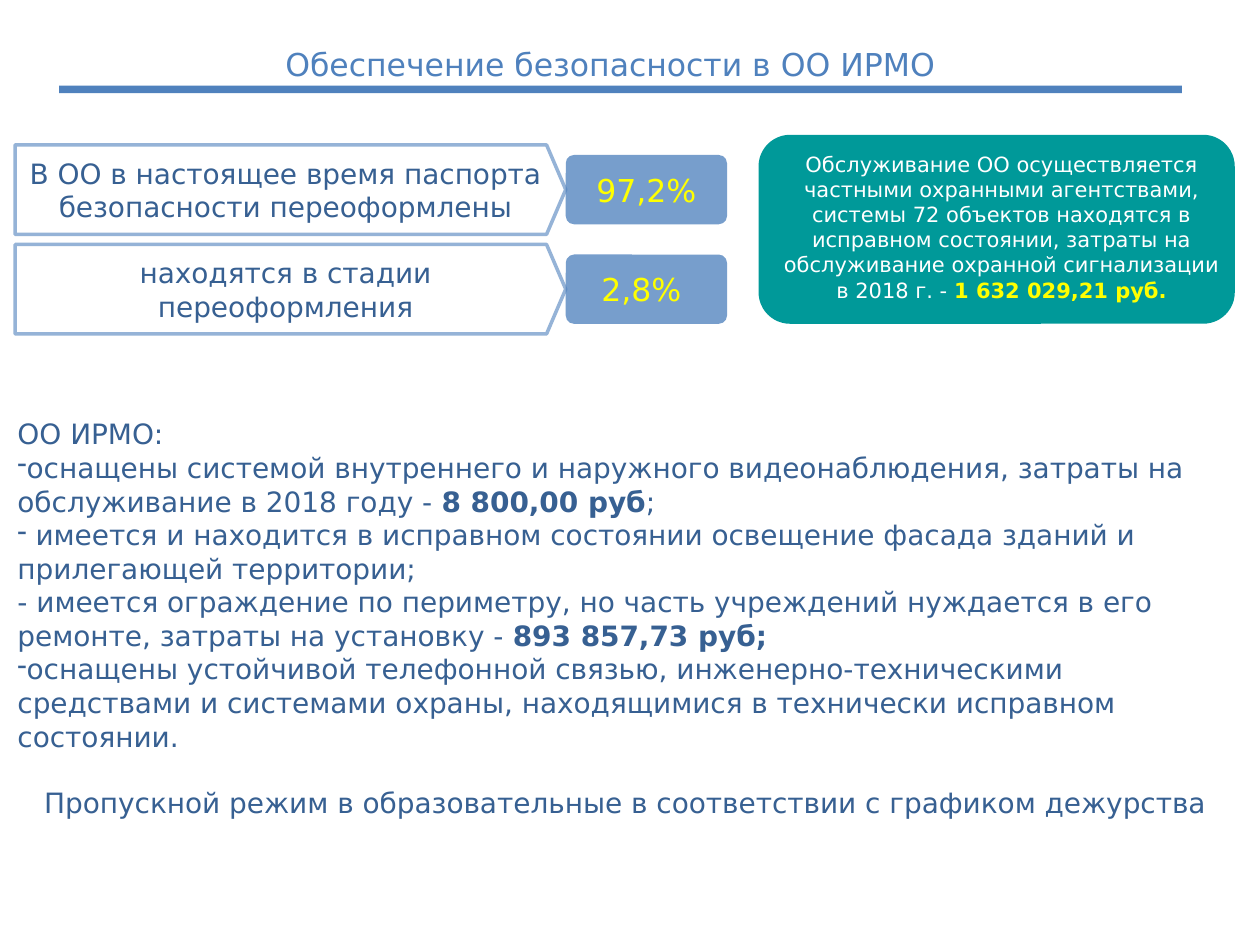
from dataclasses import dataclass

from lxml.etree import SubElement
from pptx import Presentation
from pptx.dml.color import RGBColor
from pptx.enum.shapes import MSO_SHAPE
from pptx.enum.text import MSO_ANCHOR, PP_ALIGN
from pptx.oxml.ns import qn
from pptx.util import Inches, Pt

COLUMNS, ROWS = 100, 75
SLIDE_WIDTH, SLIDE_HEIGHT = Inches(10), Inches(7.5)


@dataclass(frozen=True)
class Theme:
    font: str = "DejaVu Sans"
    accent: str = "4F81BD"
    body: str = "376092"
    outline: str = "95B3D7"
    panel: str = "009999"
    light: str = "FFFFFF"
    highlight: str = "FFFF00"
    title_size: int = 18
    body_size: int = 16
    note_size: int = 12


THEME = Theme()


def rgb(value):
    return RGBColor.from_string(value)


def place(column, row, columns, rows):
    return (
        int(SLIDE_WIDTH * column / COLUMNS),
        int(SLIDE_HEIGHT * row / ROWS),
        int(SLIDE_WIDTH * columns / COLUMNS),
        int(SLIDE_HEIGHT * rows / ROWS),
    )


def add_dash(paragraph):
    properties = paragraph._p.get_or_add_pPr()
    properties.set("marL", "0")
    properties.set("indent", "0")
    SubElement(properties, qn("a:buChar")).set("char", "-")


def write_paragraph(paragraph, parts, size, color, centered=True, dash=False,
                    strong_color=None):
    if dash:
        add_dash(paragraph)
    paragraph.alignment = PP_ALIGN.CENTER if centered else PP_ALIGN.LEFT
    paragraph.font.name = THEME.font
    paragraph.font.size = Pt(size)
    paragraph.font.color.rgb = rgb(color)
    for position, words in enumerate(parts):
        run = paragraph.add_run()
        run.text = words
        if position % 2:
            run.font.bold = True
            if strong_color:
                run.font.color.rgb = rgb(strong_color)


def next_paragraph(frame, position):
    return frame.add_paragraph() if position else frame.paragraphs[0]


def add_text(slide, cells, anchor=MSO_ANCHOR.TOP):
    frame = slide.shapes.add_textbox(*place(*cells)).text_frame
    frame.word_wrap = True
    frame.vertical_anchor = anchor
    return frame


def add_block(slide, kind, cells, fill, adjustment=None, outline=None, opacity=None):
    block = slide.shapes.add_shape(kind, *place(*cells))
    block.shadow.inherit = False
    if adjustment is not None:
        block.adjustments[0] = adjustment
    block.fill.solid()
    block.fill.fore_color.rgb = rgb(fill)
    if opacity:
        color = block.fill._xPr.find(qn("a:solidFill"))[0]
        SubElement(color, qn("a:alpha")).set("val", str(opacity * 1000))
    if outline:
        block.line.color.rgb = rgb(outline)
        block.line.width = Pt(2)
    else:
        block.line.fill.background()
    block.text_frame.vertical_anchor = MSO_ANCHOR.MIDDLE
    return block


def add_title(slide):
    frame = add_text(slide, (0.8, 0.8, 95.3, 8.6), MSO_ANCHOR.MIDDLE)
    write_paragraph(frame.paragraphs[0], ["Обеспечение безопасности в ОО ИРМО"],
                    THEME.title_size, THEME.accent)
    add_block(slide, MSO_SHAPE.RECTANGLE, (4.7, 6.8, 89.1, 0.6), THEME.accent)


def add_indicator(slide, row, label_lines, share):
    label = add_block(slide, MSO_SHAPE.PENTAGON, (1.2, row, 43.7, 7.1), THEME.light,
                      0.214, outline=THEME.outline)
    label.text_frame.word_wrap = True
    for position, line in enumerate(label_lines):
        write_paragraph(next_paragraph(label.text_frame, position), [line],
                        THEME.body_size, THEME.body)
    value = add_block(slide, MSO_SHAPE.ROUNDED_RECTANGLE, (44.9, row + 0.8, 12.8, 5.5),
                      THEME.accent, 0.12, opacity=77)
    value.text_frame.word_wrap = False
    write_paragraph(value.text_frame.paragraphs[0], [share],
                    THEME.title_size, THEME.highlight)


def add_guard_note(slide):
    add_block(slide, MSO_SHAPE.ROUNDED_RECTANGLE, (60.2, 10.7, 37.8, 15), THEME.panel, 0.167)
    frame = add_text(slide, (61, 11.5, 37, 13.1))
    note = [
        "Обслуживание ОО осуществляется частными охранными агентствами, "
        "системы 72 объектов находятся в исправном состоянии, затраты на "
        "обслуживание охранной сигнализации в 2018 г. - ",
        "1 632 029,21 руб.",
    ]
    write_paragraph(frame.paragraphs[0], note, THEME.note_size, THEME.light,
                    strong_color=THEME.highlight)


def add_measures(slide):
    frame = add_text(slide, (0.4, 32.6, 99.2, 30.6))
    measures = [
        (False, ["ОО ИРМО:"]),
        (True, ["оснащены системой внутреннего и наружного видеонаблюдения, "
                "затраты на обслуживание в 2018 году - ", "8 800,00 руб", ";"]),
        (True, [" имеется и находится в исправном состоянии освещение фасада "
                "зданий и прилегающей территории;"]),
        (False, ["- имеется ограждение по периметру, но часть учреждений "
                 "нуждается в его ремонте, затраты на установку - ",
                 "893 857,73 руб;"]),
        (True, ["оснащены устойчивой телефонной связью, инженерно-техническими "
                "средствами и системами охраны, находящимися в технически "
                "исправном состоянии."]),
    ]
    for position, (dash, parts) in enumerate(measures):
        write_paragraph(next_paragraph(frame, position), parts, THEME.body_size,
                        THEME.body, centered=False, dash=dash)
    access = frame.add_paragraph()
    access.space_before = Pt(19)
    write_paragraph(access, ["Пропускной режим в образовательные в соответствии "
                             "с графиком дежурства "], THEME.body_size, THEME.body)


def main():
    presentation = Presentation()
    presentation.slide_width, presentation.slide_height = SLIDE_WIDTH, SLIDE_HEIGHT
    slide = presentation.slides.add_slide(presentation.slide_layouts[6])
    add_title(slide)
    add_measures(slide)
    indicators = [
        (["В ОО в настоящее время паспорта", "безопасности переоформлены"], "97,2%"),
        (["находятся в стадии переоформления"], "2,8% "),
    ]
    for position, (label_lines, share) in enumerate(indicators):
        add_indicator(slide, 11.5 + 7.9 * position, label_lines, share)
    add_guard_note(slide)
    presentation.save("out.pptx")


if __name__ == "__main__":
    main()
